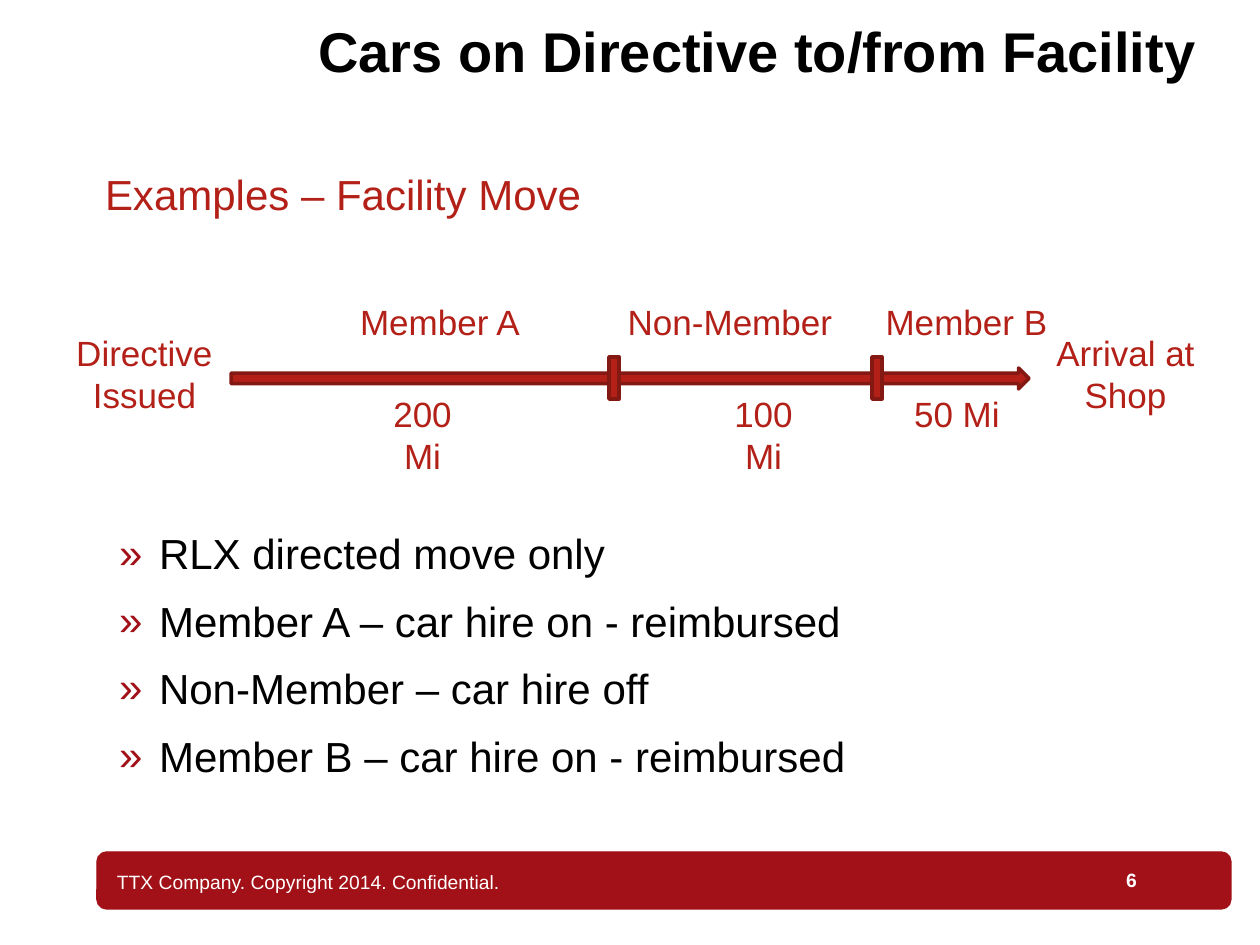
from dataclasses import dataclass
from typing import Optional

from lxml import etree
from pptx import Presentation
from pptx.dml.color import RGBColor
from pptx.enum.shapes import MSO_SHAPE
from pptx.enum.text import MSO_ANCHOR, MSO_AUTO_SIZE, PP_ALIGN
from pptx.oxml.ns import qn
from pptx.util import Emu, Pt

LEFT, CENTER, RIGHT = PP_ALIGN.LEFT, PP_ALIGN.CENTER, PP_ALIGN.RIGHT
TOP, BOTTOM = MSO_ANCHOR.TOP, MSO_ANCHOR.BOTTOM
GROW, FIXED = MSO_AUTO_SIZE.SHAPE_TO_FIT_TEXT, MSO_AUTO_SIZE.NONE
ROUNDED, RECT, ARROW = MSO_SHAPE.ROUNDED_RECTANGLE, MSO_SHAPE.RECTANGLE, MSO_SHAPE.RIGHT_ARROW

PX_PER_INCH = 126
FONT = "Arial"
COLORS = {
    "bar": "A11117",
    "red": "B32018",
    "edge": "841812",
    "black": "000000",
    "white": "FFFFFF",
}


@dataclass(frozen=True)
class Block:
    x: int
    y: int
    w: int
    h: int
    kind: int
    fill: str = "red"
    line: str = "edge"
    weight: float = 2


@dataclass(frozen=True)
class Text:
    x: int
    y: int
    w: int
    h: int
    lines: tuple[str, ...]
    size: int = 20
    color: str = "red"
    bold: bool = False
    align: int = CENTER
    anchor: int = TOP
    inset: tuple[int, int] = (13, 6)
    grow: bool = True
    wrap: bool = True
    spacing: Optional[float] = None
    after: Optional[float] = None
    bullet: str = ""


def px(n: int) -> Emu:
    return Emu(round(n * 914400 / PX_PER_INCH))


def rgb(name: str) -> RGBColor:
    return RGBColor.from_string(COLORS[name])


def add_bullet(p, char: str) -> None:
    pPr = p._p.get_or_add_pPr()
    pPr.set("marL", str(px(54)))
    pPr.set("indent", str(px(-40)))
    clr = etree.SubElement(pPr, qn("a:buClr"))
    etree.SubElement(clr, qn("a:srgbClr"), val=COLORS["bar"])
    etree.SubElement(pPr, qn("a:buFont"), typeface=FONT)
    etree.SubElement(pPr, qn("a:buChar"), char=char)


def draw_block(s, b: Block) -> None:
    sp = s.shapes.add_shape(b.kind, px(b.x), px(b.y), px(b.w), px(b.h))
    sp.shadow.inherit = False
    sp.fill.solid()
    sp.fill.fore_color.rgb = rgb(b.fill)
    sp.line.color.rgb = rgb(b.line)
    sp.line.width = Pt(b.weight)


def draw_text(s, t: Text) -> None:
    sp = s.shapes.add_textbox(px(t.x), px(t.y), px(t.w), px(t.h))
    tf = sp.text_frame
    tf.word_wrap = t.wrap
    tf.auto_size = GROW if t.grow else FIXED
    tf.vertical_anchor = t.anchor
    tf.margin_left = tf.margin_right = px(t.inset[0])
    tf.margin_top = tf.margin_bottom = px(t.inset[1])
    for i, line in enumerate(t.lines):
        p = tf.paragraphs[0] if i == 0 else tf.add_paragraph()
        p.alignment = t.align
        if t.spacing is not None:
            p.line_spacing = t.spacing
        if t.after is not None:
            p.space_after = Pt(t.after)
        if t.bullet:
            add_bullet(p, t.bullet)
        r = p.add_run()
        r.text = line
        r.font.name = FONT
        r.font.size = Pt(t.size)
        r.font.bold = t.bold
        r.font.color.rgb = rgb(t.color)


def placeholder_text(x: int, y: int, w: int, h: int, *lines: str, **style) -> Text:
    return Text(x, y, w, h, lines, inset=(0, 0), grow=False, spacing=0.89, **style)


BLOCKS = [
    Block(97, 852, 1134, 57, ROUNDED, "bar", "bar", 0.75),
    Block(231, 368, 798, 21, ARROW),
    *(Block(x, 357, 10, 42, RECT) for x in (609, 872)),
]

TEXTS = [
    Text(106, 864, 438, 35, ("TTX Company. Copyright 2014. Confidential.",),
         11, "white", align=LEFT, inset=(11, 6)),
    Text(1113, 862, 84, 36, ("6",), 11, "white", bold=True, align=LEFT),
    placeholder_text(63, 25, 1134, 111, "Cars on Directive to/from Facility",
                     size=32, color="black", bold=True, align=RIGHT),
    placeholder_text(105, 157, 1092, 63, "Examples – Facility Move",
                     size=24, align=LEFT, anchor=BOTTOM, after=12.9),
    Text(63, 325, 163, 97, ("Directive", "Issued"), wrap=False),
    Text(1043, 325, 165, 97, ("Arrival at", "Shop"), wrap=False),
    *(Text(x, 294, w, 55, (name,)) for x, w, name in (
        (345, 190, "Member A"), (599, 262, "Non-Member"), (872, 189, "Member B"))),
    *(Text(x, 386, w, 55, (miles,), wrap=False) for x, w, miles in (
        (357, 131, "200 Mi"), (698, 131, "100 Mi"), (901, 112, "50 Mi"))),
    placeholder_text(105, 534, 1092, 310,
                     "RLX directed move only",
                     "Member A – car hire on - reimbursed",
                     "Non-Member – car hire off",
                     "Member B – car hire on - reimbursed",
                     size=24, color="black", align=LEFT, after=12.9, bullet="»"),
]


def main() -> None:
    prs = Presentation()
    prs.slide_width, prs.slide_height = px(1260), px(945)
    s = prs.slides.add_slide(prs.slide_layouts[6])
    for block in BLOCKS:
        draw_block(s, block)
    for text in TEXTS:
        draw_text(s, text)
    prs.save("out.pptx")


if __name__ == "__main__":
    main()
